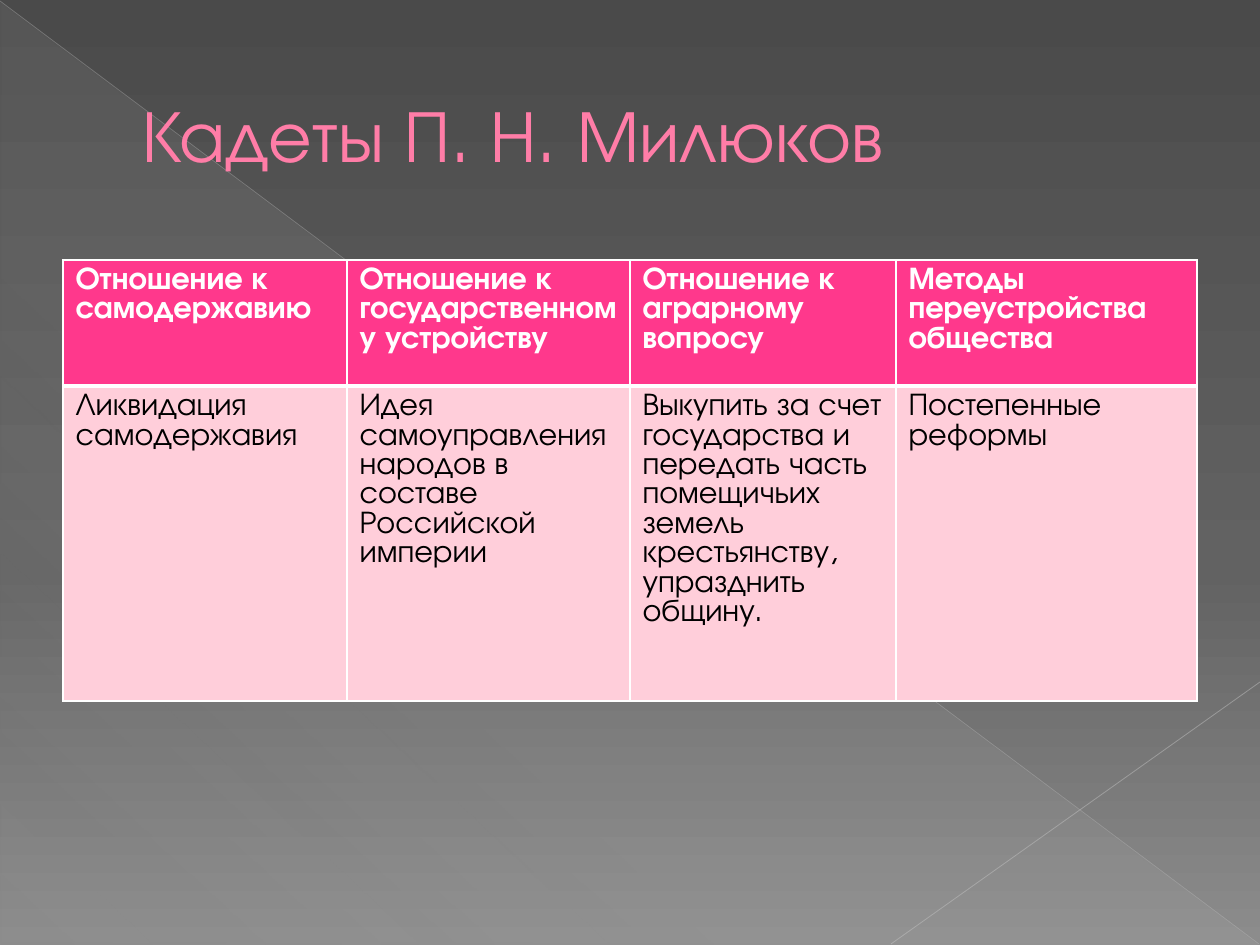
from dataclasses import dataclass

from lxml.etree import SubElement
from pptx import Presentation
from pptx.dml.color import RGBColor
from pptx.enum.shapes import MSO_CONNECTOR, MSO_SHAPE
from pptx.enum.text import MSO_ANCHOR
from pptx.oxml.ns import qn
from pptx.util import Emu, Pt

PX = 914400 / 126
FONT = "TeX Gyre Adventor"
COLORS = {
    "back_top": "4A4A4A", "back_middle": "626262", "back_bottom": "8C8C8C",
    "triangle": "D2D2D2", "long_line": "BFBFBF", "short_line": "C6C6C6",
    "title": "FF7DA7", "header": "FF388C", "body": "FFCEDA",
    "white": "FFFFFF", "black": "000000",
}


@dataclass
class Stop:
    position: int
    color: str
    alpha: int = 100


@dataclass
class Ray:
    start: tuple[int, int]
    end: tuple[int, int]
    color: str
    width: float
    alpha: int


@dataclass
class RowStyle:
    height: int
    fill: str
    text: str
    bold: bool
    top: int
    bottom: int


RAYS = [
    Ray((0, 1), (1259, 944), "long_line", 0.39, 35),
    Ray((1260, 682), (891, 944), "short_line", 0.47, 45),
]
COLUMNS = [284, 283, 266, 301]
ROW_STYLES = [
    RowStyle(100, "header", "white", True, 1, 3),
    RowStyle(248, "body", "black", False, 3, 1),
]
TEXTS = [
    ["Отношение к самодержавию", "Отношение к государственному устройству",
     "Отношение к аграрному вопросу", "Методы переустройства общества"],
    ["Ликвидация самодержавия",
     "Идея самоуправления народов в составе Российской империи",
     "Выкупить за счет государства и передать часть помещичьих земель "
     "крестьянству, упразднить общину.",
     "Постепенные реформы"],
]


def px(length: int) -> Emu:
    return Emu(round(length * PX))


def rgb(name: str) -> RGBColor:
    return RGBColor.from_string(COLORS[name])


def add_color(parent, name: str, alpha: int = 100) -> None:
    color = SubElement(parent, qn("a:srgbClr"), val=COLORS[name])
    if alpha < 100:
        SubElement(color, qn("a:alpha"), val=str(alpha * 1000))


def set_gradient(fill, element, stops: list[Stop], angle: int) -> None:
    fill.gradient()
    gradient = next(element.iter(qn("a:gradFill")))
    for child in list(gradient):
        gradient.remove(child)
    stop_list = SubElement(gradient, qn("a:gsLst"))
    for stop in stops:
        mark = SubElement(stop_list, qn("a:gs"), pos=str(stop.position * 1000))
        add_color(mark, stop.color, stop.alpha)
    SubElement(gradient, qn("a:lin"), ang=str(angle * 60000), scaled="0")


def format_text(para, text: str, size: int, color: str, bold: bool) -> None:
    para.text = text
    for span in para.runs:
        span.font.name = FONT
        span.font.size = Pt(size)
        span.font.bold = bold
        span.font.color.rgb = rgb(color)


def add_ray(page, ray: Ray) -> None:
    line = page.shapes.add_connector(
        MSO_CONNECTOR.STRAIGHT, *map(px, ray.start + ray.end))
    line.line.width = Pt(ray.width)
    line.line.color.rgb = rgb(ray.color)
    color = next(line.line._ln.iter(qn("a:srgbClr")))
    SubElement(color, qn("a:alpha"), val=str(ray.alpha * 1000))
    SubElement(line._element.spPr, qn("a:effectLst"))


def add_borders(cell, style: RowStyle) -> None:
    properties = cell._tc.get_or_add_tcPr()
    widths = {"L": 1, "R": 1, "T": style.top, "B": style.bottom}
    for side, width in widths.items():
        border = SubElement(properties, qn(f"a:ln{side}"), w=str(Pt(width)))
        add_color(SubElement(border, qn("a:solidFill")), "white")


def add_table(page) -> None:
    height = sum(style.height for style in ROW_STYLES)
    table = page.shapes.add_table(
        len(TEXTS), len(COLUMNS), px(63), px(260), px(sum(COLUMNS)), px(height)).table
    for column, width in zip(table.columns, COLUMNS):
        column.width = px(width)
    for row, style, texts in zip(table.rows, ROW_STYLES, TEXTS):
        row.height = px(style.height)
        for cell, text in zip(row.cells, texts):
            add_borders(cell, style)
            cell.fill.solid()
            cell.fill.fore_color.rgb = rgb(style.fill)
            format_text(cell.text_frame.paragraphs[0], text, 18, style.text, style.bold)


def add_title(page) -> None:
    box = page.shapes.add_textbox(px(63), px(37), px(1134), px(193))
    frame = box.text_frame
    frame.word_wrap = True
    frame.vertical_anchor = MSO_ANCHOR.MIDDLE
    para = frame.paragraphs[0]
    format_text(para, "Кадеты П. Н. Милюков", 42, "title", False)
    para._p.get_or_add_pPr().set("marL", str(px(67)))


def main() -> None:
    deck = Presentation()
    deck.slide_width, deck.slide_height = px(1260), px(945)
    page = deck.slides.add_slide(deck.slide_layouts[6])

    # Background with a faint triangle and two rays
    back_fill = page.background.fill
    set_gradient(back_fill, page._element, [
        Stop(0, "back_top"), Stop(60, "back_middle"), Stop(100, "back_bottom")], 90)
    triangle = page.shapes.add_shape(
        MSO_SHAPE.RIGHT_TRIANGLE, px(1), px(2), px(1258), px(942))
    triangle.shadow.inherit = False
    triangle.line.fill.background()
    set_gradient(triangle.fill, triangle._element, [
        Stop(0, "triangle", 10), Stop(70, "triangle", 8), Stop(100, "triangle", 1)], 133)
    for ray in RAYS:
        add_ray(page, ray)

    # Title and table
    add_title(page)
    add_table(page)
    deck.save("out.pptx")


if __name__ == "__main__":
    main()
